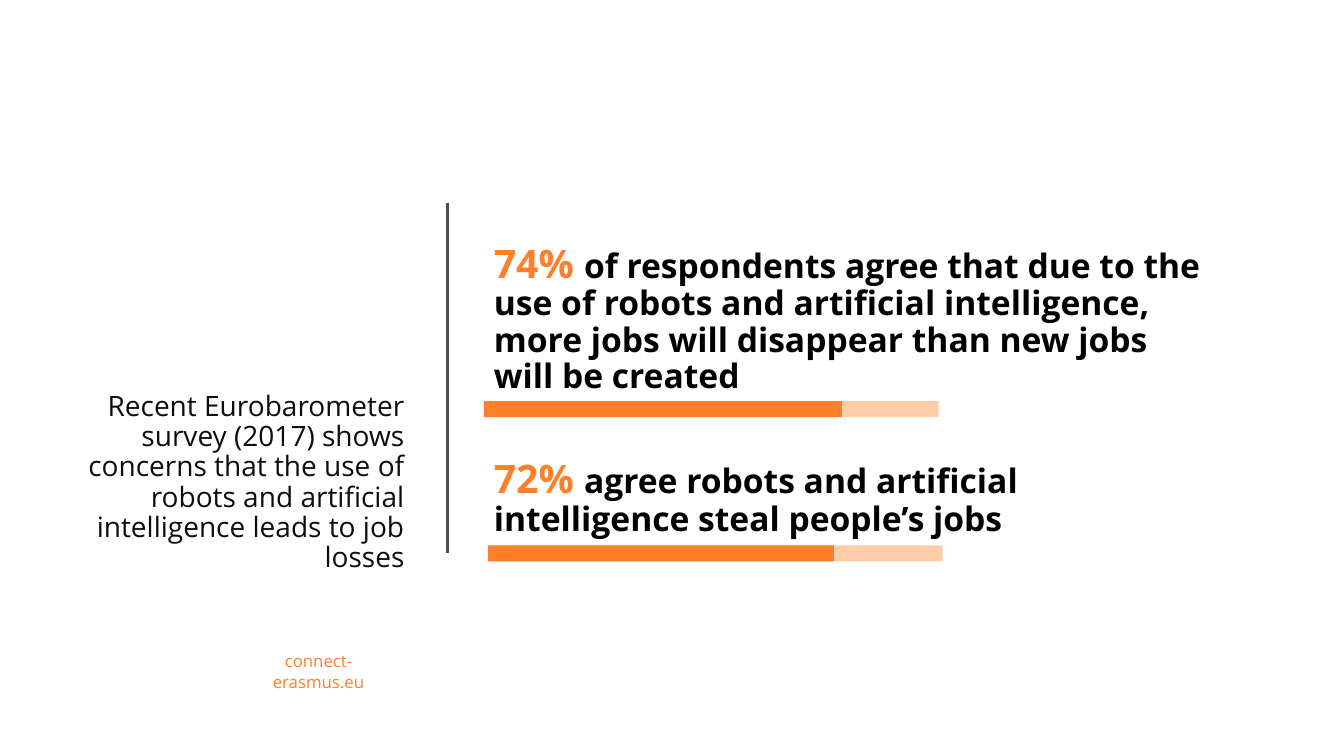
from pptx import Presentation
from pptx.dml.color import RGBColor
from pptx.enum import shapes, text
from pptx.oxml.ns import qn
from pptx.util import Inches, Pt

# Content
FONT = "Open Sans"
ORANGE, PEACH, BLACK = "FF7F2A", "FFCEA9", "000000"
SITE = "connect-erasmus.eu"
SUMMARY = ("Recent Eurobarometer survey (2017) shows concerns that the use of "
           "robots and artificial intelligence leads to job losses")
FINDINGS = [  # share, statement, space before in points
    ("74% ", "of respondents agree that due to the use of robots and artificial "
             "intelligence, more jobs will disappear than new jobs will be created", 0),
    ("72% ", "agree robots and artificial intelligence steal people’s jobs", 46),
]
BARS = [(4.84, 5.41, 3.43), (4.8, 3.98, 3.55)]  # left, top, filled width
BAR_WIDTH, BAR_HEIGHT = 4.51, 0.16

prs = Presentation()
prs.slide_width, prs.slide_height = Inches(13.33), Inches(7.5)
s = prs.slides.add_slide(prs.slide_layouts[6])


def colour(code):
    return RGBColor.from_string(code)


def style(font, size, code, bold=False):
    font.name, font.size, font.bold = FONT, Pt(size), bold
    font.color.rgb = colour(code)


def add_box(left, top, width, height, anchor):
    box = s.shapes.add_textbox(*map(Inches, (left, top, width, height)))
    tf = box.text_frame
    tf.word_wrap = True
    tf.vertical_anchor = anchor
    return tf


def add_bar(left, top, width, code):
    sp = s.shapes.add_shape(shapes.MSO_SHAPE.RECTANGLE,
                            *map(Inches, (left, top, width, BAR_HEIGHT)))
    sp.shadow.inherit = False
    sp.fill.solid()
    sp.fill.fore_color.rgb = colour(code)
    sp.line.fill.background()


# Web address
p = add_box(2.28, 6.51, 1.76, 0.3, text.MSO_ANCHOR.MIDDLE).paragraphs[0]
p.text, p.alignment = SITE, text.PP_ALIGN.CENTER
style(p.font, 12, ORANGE)

# Summary on the left
p = add_box(0.73, 1.14, 3.38, 4.6, text.MSO_ANCHOR.BOTTOM).paragraphs[0]
p.text, p.alignment, p.line_spacing = SUMMARY, text.PP_ALIGN.RIGHT, 0.9
style(p.font, 20, "0D0D0D")

# Divider
divider = s.shapes.add_connector(shapes.MSO_CONNECTOR.STRAIGHT, Inches(4.44),
                                 Inches(2.01), Inches(4.44), Inches(5.49))
divider.line.color.rgb = colour("505046")
divider.line.width = Pt(2)
properties = divider._element.spPr
properties.append(properties.makeelement(qn("a:effectLst"), {}))

# Findings
tf = add_box(4.8, 1.76, 7.22, 4.25, text.MSO_ANCHOR.MIDDLE)
for i, (share, statement, gap) in enumerate(FINDINGS):
    p = tf.add_paragraph() if i else tf.paragraphs[0]
    p.line_spacing, p.space_before = 0.9, Pt(gap)
    for words, size, code in ((share, 28, ORANGE), (statement, 24, BLACK)):
        r = p.add_run()
        r.text = words
        style(r.font, size, code, bold=True)

# Share bars
for left, top, filled in BARS:
    add_bar(left, top, BAR_WIDTH, PEACH)
    add_bar(left, top, filled, ORANGE)

prs.save("out.pptx")
